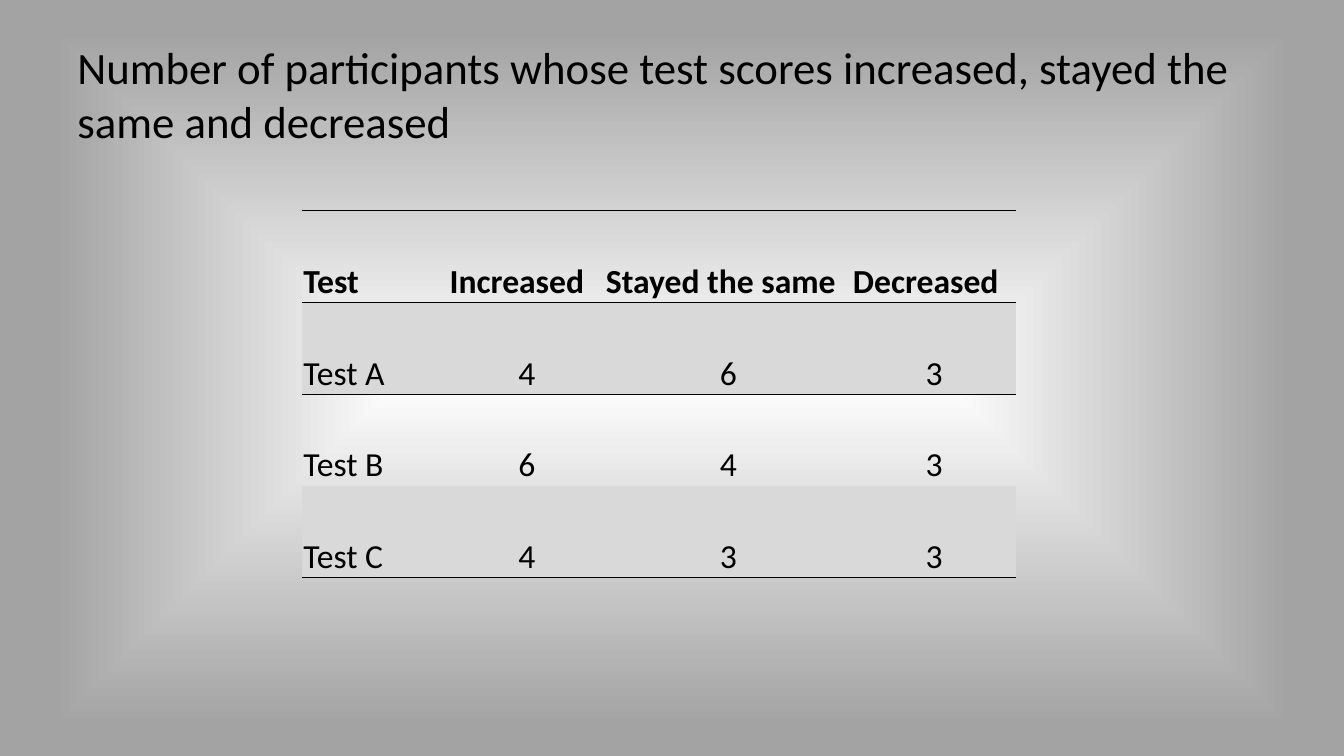
from pptx import Presentation
from pptx.dml.color import RGBColor
from pptx.enum.text import MSO_ANCHOR as Anchor, PP_ALIGN as Align
from pptx.oxml import parse_xml
from pptx.oxml.ns import nsdecls
from pptx.util import Inches, Pt

FONT = "Calibri"
BLACK = "000000"
BAND = "D9D9D9"
PLAIN = "{2D5ABB26-0587-4C30-8999-92F81FD0307C}"
TITLE = ("Number of participants whose test scores increased, "
         "stayed the same and decreased")
WIDTHS = [1.45, 1.55, 2.45, 1.63]
HEIGHT = 0.91
ROWS = [
    ["Test", "Increased", "Stayed the same", "Decreased"],
    ["Test A", "4", "6", "3"],
    ["Test B", "6", "4", "3"],
    ["Test C", "4", "3", "3"],
]


def color(text):
    return RGBColor.from_string(text)


def style(para, size, bold=False):
    font = para.font
    font.name = FONT
    font.size = Pt(size)
    font.bold = bold
    font.color.rgb = color(BLACK)


def add_glow(slide):
    """Fill the background with a gradient, white in the centre."""
    slide.element.cSld.insert(0, parse_xml(
        f'<p:bg {nsdecls("p", "a")}><p:bgPr><a:gradFill><a:gsLst>'
        '<a:gs pos="0"><a:srgbClr val="FFFFFF"/></a:gs>'
        '<a:gs pos="92000"><a:srgbClr val="A3A3A3">'
        '<a:alpha val="60000"/></a:srgbClr></a:gs></a:gsLst>'
        '<a:path path="shape">'
        '<a:fillToRect l="50000" t="50000" r="50000" b="50000"/></a:path>'
        '</a:gradFill><a:effectLst/></p:bgPr></p:bg>'))


def add_title(slide):
    box = slide.shapes.add_textbox(
        Inches(0.67), Inches(0.3), Inches(12), Inches(1.25))
    frame = box.text_frame
    frame.word_wrap = True
    frame.vertical_anchor = Anchor.MIDDLE
    frame.text = TITLE
    style(frame.paragraphs[0], 32)


def add_rule(cell, side):
    """Draw a thin line on one side of the cell: T or B."""
    props = cell._tc.get_or_add_tcPr()
    props.append(parse_xml(
        f'<a:ln{side} {nsdecls("a")} w="6350"><a:solidFill>'
        f'<a:srgbClr val="{BLACK}"/></a:solidFill></a:ln{side}>'))


def fill_cell(cell, text, row, col):
    cell.margin_left = cell.margin_right = cell.margin_top = Inches(0.01)
    cell.margin_bottom = 0
    cell.vertical_anchor = Anchor.BOTTOM
    cell.text = text
    para = cell.text_frame.paragraphs[0]
    para.alignment = Align.CENTER if row and col else Align.LEFT
    style(para, 24, bold=row == 0)
    if row < 2:
        add_rule(cell, "T")
    if row in (0, len(ROWS) - 1):
        add_rule(cell, "B")
    if row % 2:
        cell.fill.solid()
        cell.fill.fore_color.rgb = color(BAND)
    else:
        cell.fill.background()


def add_scores(slide):
    table = slide.shapes.add_table(
        len(ROWS), len(WIDTHS), Inches(3), Inches(2.09),
        Inches(sum(WIDTHS)), Inches(HEIGHT * len(ROWS))).table
    table._tbl.tblPr.find("{*}tableStyleId").text = PLAIN
    table.first_row = table.horz_banding = False
    for col, width in enumerate(WIDTHS):
        table.columns[col].width = Inches(width)
    for row, texts in enumerate(ROWS):
        table.rows[row].height = Inches(HEIGHT)
        for col, text in enumerate(texts):
            fill_cell(table.cell(row, col), text, row, col)
        if row == len(ROWS) - 1:
            for cell in table.rows[row].cells:
                cell.fill.fore_color.rgb = color(BAND)


def main():
    deck = Presentation()
    deck.slide_width = Inches(13.33)
    deck.slide_height = Inches(7.5)
    slide = deck.slides.add_slide(deck.slide_layouts[6])
    add_glow(slide)
    add_title(slide)
    add_scores(slide)
    deck.save("out.pptx")


if __name__ == "__main__":
    main()
